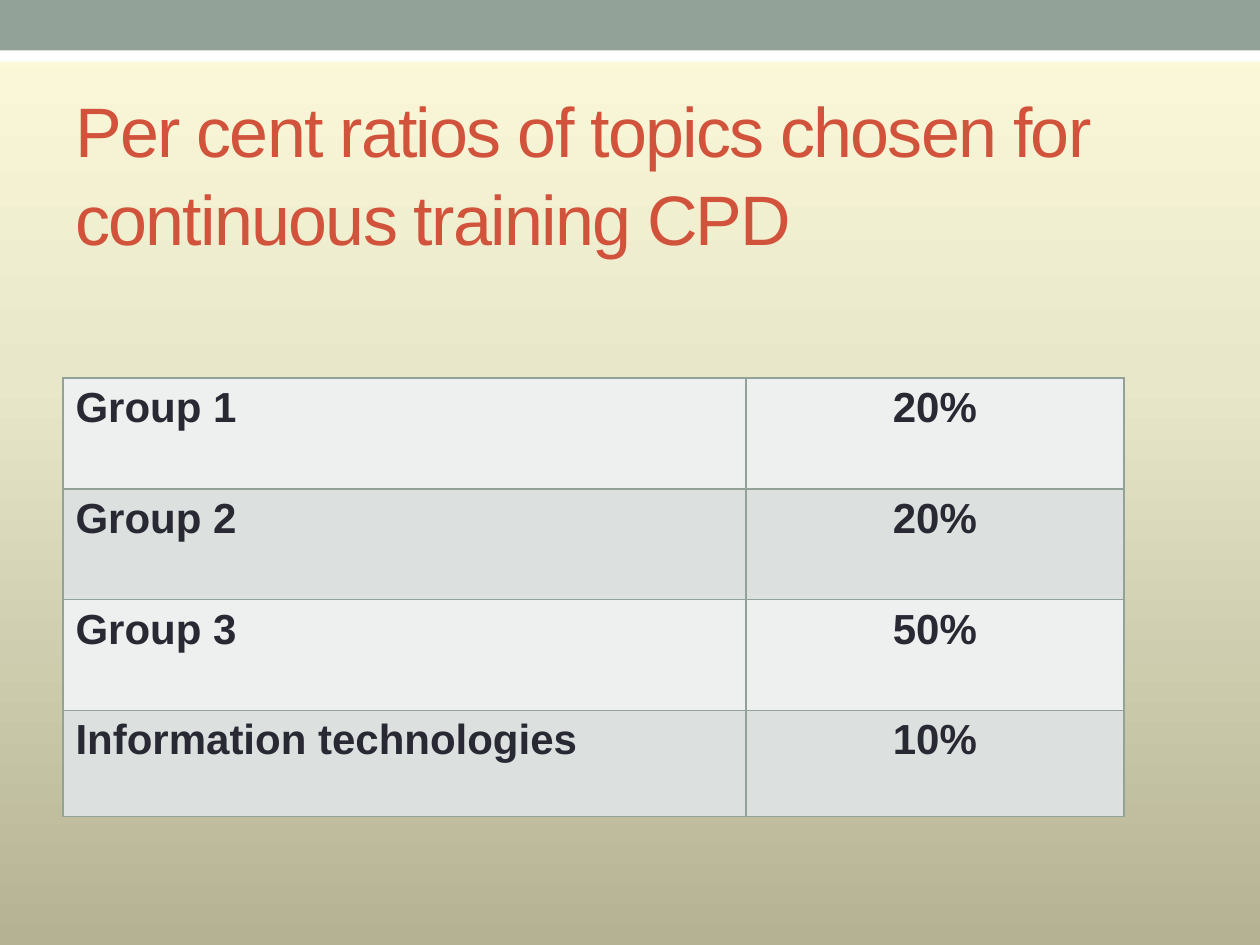
from copy import deepcopy
from lxml.etree import SubElement
from pptx import Presentation
from pptx.dml.color import RGBColor
from pptx.enum.shapes import MSO_SHAPE as Shape
from pptx.enum.text import MSO_ANCHOR as Anchor, PP_ALIGN as Align
from pptx.oxml.ns import qn
from pptx.util import Inches, Pt

WHITE = RGBColor(0xFF, 0xFF, 0xFF)
SAGE = RGBColor(0x93, 0xA2, 0x99)
RED = RGBColor(0xD2, 0x53, 0x3C)
INK = RGBColor(0x29, 0x29, 0x34)
BANDS = [RGBColor(0xEE, 0xF0, 0xEF), RGBColor(0xDC, 0xE0, 0xDE)]
STOPS = [
    (0, RGBColor(0xFD, 0xFB, 0xDA)),
    (0.4, RGBColor(0xE8, 0xE7, 0xCA)),
    (1, RGBColor(0xB4, 0xB2, 0x93)),
]
ROWS = [
    ("Group 1", "20%"),
    ("Group 2", "20%"),
    ("Group 3", "50%"),
    ("Information technologies", "10%"),
]
WIDTHS = [5.42, 3]
HEIGHTS = [0.88, 0.88, 0.88, 0.84]


def style(run, size, color, bold=False):
    run.font.name = "Arial"
    run.font.size = Pt(size)
    run.font.bold = bold
    run.font.color.rgb = color


def border(cell):
    props = cell._tc.get_or_add_tcPr()
    for i, side in enumerate(("lnL", "lnR", "lnT", "lnB")):
        line = SubElement(props, qn("a:" + side), w=str(Pt(1)))
        fill = SubElement(line, qn("a:solidFill"))
        SubElement(fill, qn("a:srgbClr"), val=str(SAGE))
        props.remove(line)
        props.insert(i, line)


prs = Presentation()
prs.slide_width = Inches(10)
prs.slide_height = Inches(7.5)
slide = prs.slides.add_slide(prs.slide_layouts[6])

# Background gradient, top to bottom
back = slide.background.fill
back.gradient()
back.gradient_angle = 270
first = slide.background._cSld.find(".//" + qn("a:gs"))
first.addnext(deepcopy(first))
for stop, (pos, color) in zip(back.gradient_stops, STOPS):
    stop.position = pos
    stop.color.rgb = color

# Bands across the top
for top, height, color in [(0.24, 0.25, WHITE), (0, 0.4, SAGE)]:
    band = slide.shapes.add_shape(
        Shape.RECTANGLE, 0, Inches(top), prs.slide_width, Inches(height))
    band.shadow.inherit = False
    band.fill.solid()
    band.fill.fore_color.rgb = color
    band.line.fill.background()

# Title
title = slide.shapes.add_textbox(
    Inches(0.5), Inches(0.3), Inches(9), Inches(2.12))
frame = title.text_frame
frame.word_wrap = True
frame.vertical_anchor = Anchor.MIDDLE
frame.text = "Per cent ratios of topics chosen for continuous training CPD"
para = frame.paragraphs[0]
para.line_spacing = 1.05
run = para.runs[0]
style(run, 40, RED)
run.font._element.set("spc", "-100")

# Table of topic shares
table = slide.shapes.add_table(
    len(ROWS), len(WIDTHS), Inches(0.5), Inches(3),
    Inches(sum(WIDTHS)), Inches(sum(HEIGHTS))).table
for col, width in zip(table.columns, WIDTHS):
    col.width = Inches(width)
for r, (row, height) in enumerate(zip(ROWS, HEIGHTS)):
    table.rows[r].height = Inches(height)
    for c, text in enumerate(row):
        cell = table.cell(r, c)
        cell.fill.solid()
        cell.fill.fore_color.rgb = BANDS[r % 2]
        border(cell)
        cell.text_frame.text = text
        para = cell.text_frame.paragraphs[0]
        para.alignment = Align.CENTER if c else Align.LEFT
        style(para.runs[0], 24, INK, True)

prs.save("out.pptx")
